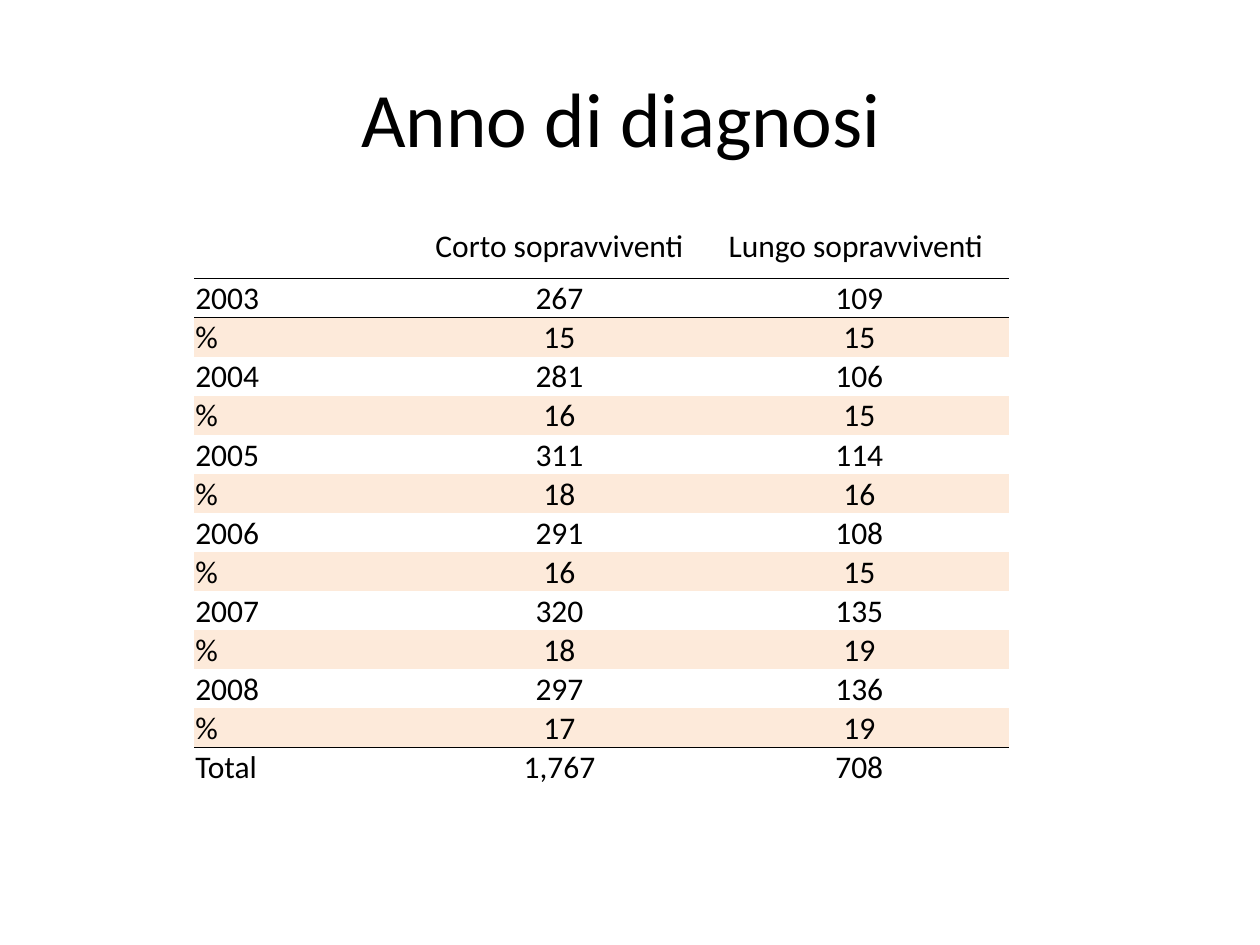
from lxml.etree import SubElement
from pptx import Presentation
from pptx.dml.color import RGBColor
from pptx.enum.text import MSO_ANCHOR as Anchor, PP_ALIGN as Align
from pptx.oxml.ns import qn
from pptx.util import Inches, Pt

BLACK = RGBColor(0x00, 0x00, 0x00)
WHITE = RGBColor(0xFF, 0xFF, 0xFF)
PEACH = RGBColor(0xFD, 0xEA, 0xDA)
NO_STYLE = "{2D5ABB26-0587-4C30-8999-92F81FD0307C}"

HEADINGS = ("", "Corto sopravviventi", "Lungo sopravviventi ")
# Year, then count and percentage for short and long survivors
DIAGNOSES = [
    ("2003", (267, 109), (15, 15)),
    ("2004", (281, 106), (16, 15)),
    ("2005", (311, 114), (18, 16)),
    ("2006", (291, 108), (16, 15)),
    ("2007", (320, 135), (18, 19)),
    ("2008", (297, 136), (17, 19)),
]
TOTALS = ("Total", "1,767", "708")


def write(frame, text, size=18, color=BLACK, font="Calibri", align=Align.CENTER):
    paragraph = frame.paragraphs[0]
    paragraph.alignment = align
    paragraph.font.size = Pt(size)
    if text:
        run = paragraph.add_run()
        run.text = text
        run.font.size = Pt(size)
        run.font.name = font
        run.font.color.rgb = color


def draw_border(cell, side, color=BLACK, width=1):
    line = SubElement(cell._tc.get_or_add_tcPr(), qn(f"a:{side}"), w=str(Pt(width)))
    fill = SubElement(line, qn("a:solidFill"))
    SubElement(fill, qn("a:srgbClr"), val=str(color))


class SlideBuilder:
    """Holds the table style and the slide being built."""

    margin = Inches(0.01)
    stripe = PEACH

    def __init__(self, slide):
        self.slide = slide
        slide.background.fill.solid()
        slide.background.fill.fore_color.rgb = WHITE

    def title(self, text, left, top, width, height):
        box = self.slide.shapes.add_textbox(left, top, width, height)
        box.text_frame.word_wrap = True
        box.text_frame.vertical_anchor = Anchor.MIDDLE
        write(box.text_frame, text, size=44)

    def table(self, rows, left, top, widths, heights, ruled):
        """Stripe the % rows and rule a line under each row in ruled."""
        frame = self.slide.shapes.add_table(
            len(rows), len(widths), left, top, sum(widths), sum(heights))
        table = frame.table
        table.first_row = table.horz_banding = False
        table._tbl.tblPr.find(qn("a:tableStyleId")).text = NO_STYLE
        for column, width in zip(table.columns, widths):
            column.width = width
        for r, (values, height) in enumerate(zip(rows, heights)):
            table.rows[r].height = height
            for c, value in enumerate(values):
                cell = table.cell(r, c)
                self.cell(cell, value, is_label=c == 0)
                if r - 1 in ruled:
                    draw_border(cell, "lnT")
                if r in ruled:
                    draw_border(cell, "lnB")
                if values[0] == "%":
                    cell.fill.solid()
                    cell.fill.fore_color.rgb = self.stripe
                else:
                    cell.fill.background()

    def cell(self, cell, text, is_label):
        cell.margin_left = cell.margin_right = cell.margin_top = self.margin
        cell.margin_bottom = 0
        cell.vertical_anchor = Anchor.BOTTOM if is_label else Anchor.MIDDLE
        write(cell.text_frame, text, align=Align.LEFT if is_label else Align.CENTER)


def main():
    deck = Presentation()
    deck.slide_width, deck.slide_height = Inches(10), Inches(7.5)
    builder = SlideBuilder(deck.slides.add_slide(deck.slide_layouts[6]))

    # Title
    builder.title("Anno di diagnosi ", Inches(0.5), Inches(0.3), Inches(9), Inches(1.25))

    # Diagnoses by year
    rows = [HEADINGS]
    for year, counts, percentages in DIAGNOSES:
        rows.append((year, *map(str, counts)))
        rows.append(("%", *map(str, percentages)))
    rows.append(TOTALS)
    builder.table(
        rows, Inches(1.54), Inches(1.7),
        widths=[Inches(1.71), Inches(2.38), Inches(2.38)],
        heights=[Inches(0.51)] + [Inches(0.31)] * (len(rows) - 1),
        ruled=(0, len(rows) - 2))

    deck.save("out.pptx")


if __name__ == "__main__":
    main()
